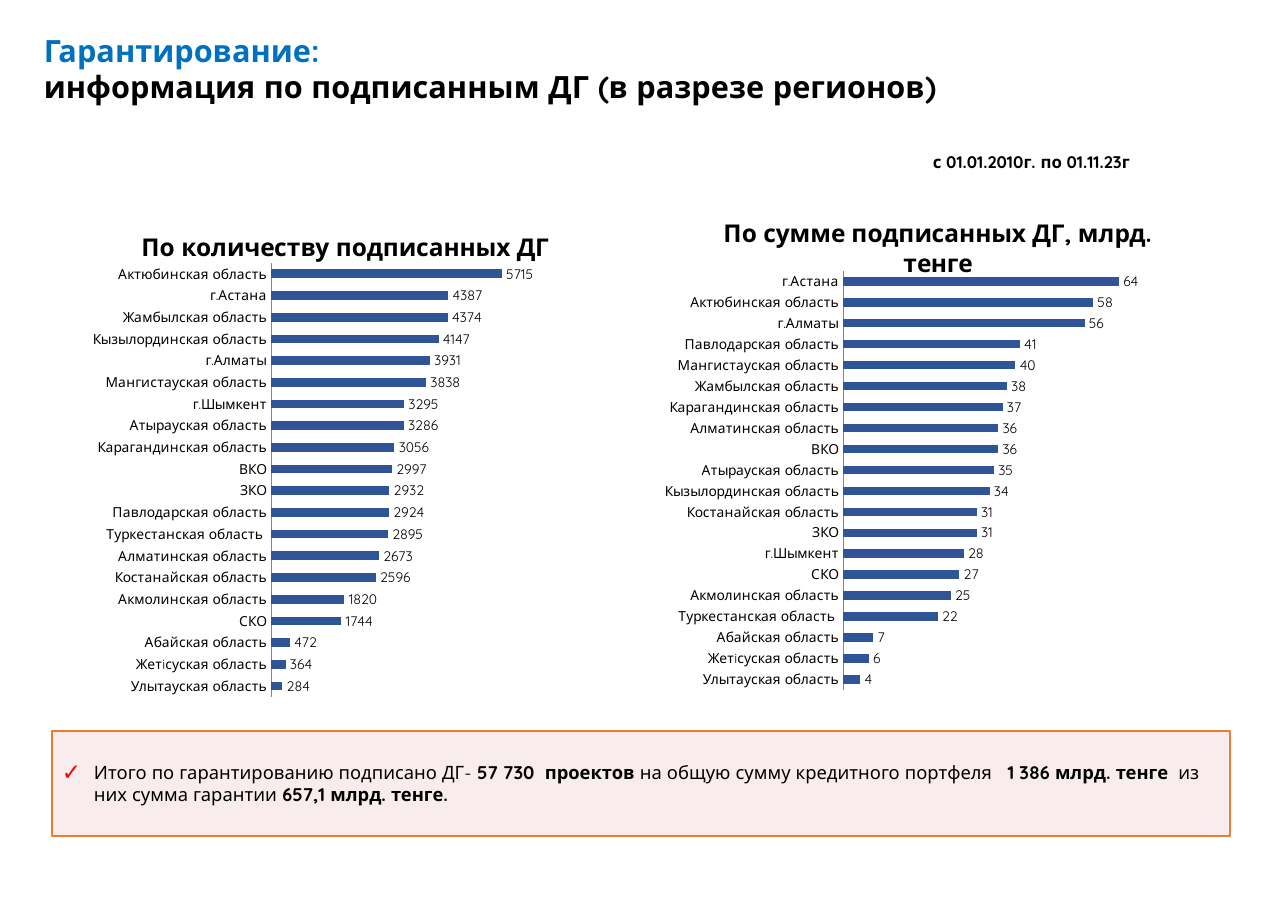
from dataclasses import dataclass

from pptx import Presentation
from pptx.chart.data import CategoryChartData
from pptx.dml.color import RGBColor
from pptx.enum.chart import XL_CHART_TYPE as ChartType
from pptx.enum.chart import XL_LABEL_POSITION as LabelPosition
from pptx.enum.chart import XL_TICK_LABEL_POSITION as TickLabels
from pptx.enum.chart import XL_TICK_MARK as TickMark
from pptx.enum.shapes import MSO_SHAPE as Preset
from pptx.enum.text import MSO_ANCHOR as Anchor
from pptx.enum.text import MSO_AUTO_SIZE as AutoSize
from pptx.enum.text import PP_ALIGN as Align
from pptx.oxml import parse_xml
from pptx.oxml.ns import nsdecls, qn
from pptx.util import Pt

PX = 914400 / 110.2


@dataclass(frozen=True)
class Theme:
    font: str = "Quicksand"
    black: str = "000000"
    blue: str = "0070C0"
    bar: str = "2F5597"
    axis: str = "868686"
    panel: str = "F2DCDB"
    border: str = "ED7D31"
    check: str = "FF0000"
    heading: int = 20
    chart_title: int = 16
    summary: int = 12
    period: int = 11
    label: int = 9


def px(*lengths):
    return [round(length * PX) for length in lengths]


def apply(target, **values):
    for name, value in values.items():
        setattr(target, name, value)


def set_layout(parent, index, box, place):
    """Place a chart part, given in px from the chart's corner."""
    for old in parent.findall(qn("c:layout")):
        parent.remove(old)
    modes = "".join(f'<c:{axis}Mode val="edge"/>' for axis in "xy")
    target = '<c:layoutTarget val="inner"/>' if len(place) == 4 else ""
    width, height = box[2:]
    sizes = "".join(f'<c:{name} val="{length / whole}"/>' for name, length, whole
                    in zip("xywh", place, (width, height, width, height)))
    parent.insert(index, parse_xml(
        f'<c:layout {nsdecls("c")}><c:manualLayout>{target}{modes}{sizes}'
        "</c:manualLayout></c:layout>"))


class SlideBuilder:
    def __init__(self, slide, theme):
        self.slide, self.theme = slide, theme

    def style(self, font, size, color=None, bold=False):
        apply(font, name=self.theme.font, size=Pt(size), bold=bold)
        font.color.rgb = RGBColor.from_string(color or self.theme.black)

    def runs(self, paragraph, size, parts):
        for text, color, bold in parts:
            if text == "\n":
                paragraph.add_line_break()
                continue
            run = paragraph.add_run()
            run.text = text
            self.style(run.font, size, color, bold)

    def text(self, box, size, parts, wrap=True):
        frame = self.slide.shapes.add_textbox(*px(*box)).text_frame
        apply(frame, word_wrap=wrap, auto_size=AutoSize.SHAPE_TO_FIT_TEXT)
        self.runs(frame.paragraphs[0], size, parts)

    def summary(self, box, parts):
        theme = self.theme
        shape = self.slide.shapes.add_shape(Preset.RECTANGLE, *px(*box))
        shape.shadow.inherit = False
        shape.fill.solid()
        shape.fill.fore_color.rgb = RGBColor.from_string(theme.panel)
        color = shape.fill._xPr.find(qn("a:solidFill"))[0]
        color.append(parse_xml(f'<a:alpha {nsdecls("a")} val="50000"/>'))
        shape.line.color.rgb = RGBColor.from_string(theme.border)
        shape.line.width = Pt(1)

        side, edge = px(9, 4)
        apply(shape.text_frame, word_wrap=True, vertical_anchor=Anchor.MIDDLE,
              margin_left=side, margin_right=side, margin_top=edge, margin_bottom=edge)
        paragraph = shape.text_frame.paragraphs[0]
        apply(paragraph, alignment=Align.LEFT, space_after=Pt(6))
        properties = paragraph._p.get_or_add_pPr()
        indent, hanging = px(33, -32)
        properties.set("marL", str(indent))
        properties.set("indent", str(hanging))
        for bullet in (f'<a:buClr {{}}><a:srgbClr val="{theme.check}"/></a:buClr>',
                       '<a:buSzPct {} val="125000"/>',
                       f'<a:buFont {{}} typeface="{theme.font}"/>',
                       '<a:buChar {} char="✓"/>'):
            properties.append(parse_xml(bullet.format(nsdecls("a"))))
        self.runs(paragraph, theme.summary, parts)

    def bar_chart(self, box, title, title_at, plot, maximum, number_format, regions):
        """Draw regions, listed from the top bar down, as horizontal bars."""
        theme = self.theme
        data = CategoryChartData()
        names, values = zip(*reversed(regions))
        data.categories = names
        data.add_series("Series 1", values)
        chart = self.slide.shapes.add_chart(
            ChartType.BAR_CLUSTERED, *px(*box), data).chart
        self.style(chart.font, theme.label)
        apply(chart, has_legend=False, has_title=True)
        self.runs(chart.chart_title.text_frame.paragraphs[0], theme.chart_title,
                  [(title, theme.black, True)])
        set_layout(chart.chart_title._element, 1, box, title_at)
        set_layout(chart._chartSpace.chart.plotArea, 0, box, plot)

        axis = chart.category_axis
        apply(axis, major_tick_mark=TickMark.NONE, minor_tick_mark=TickMark.NONE,
              tick_label_position=TickLabels.NEXT_TO_AXIS, has_major_gridlines=False)
        self.style(axis.tick_labels.font, theme.label)
        axis.format.line.color.rgb = RGBColor.from_string(theme.axis)
        axis.format.line.width = Pt(0.5)
        apply(chart.value_axis, visible=False, has_major_gridlines=False,
              minimum_scale=0, maximum_scale=maximum)

        bars = chart.plots[0]
        apply(bars, gap_width=150, vary_by_categories=False, has_data_labels=True)
        fill = bars.series[0].format.fill
        fill.solid()
        fill.fore_color.rgb = RGBColor.from_string(theme.bar)
        apply(bars.data_labels, show_value=True, position=LabelPosition.OUTSIDE_END,
              number_format=number_format, number_format_is_linked=False)
        self.style(bars.data_labels.font, theme.label)


COUNTS = [
    ("Актюбинская область", 5715), ("г.Астана", 4387), ("Жамбылская область", 4374),
    ("Кызылординская область", 4147), ("г.Алматы", 3931), ("Мангистауская область", 3838),
    ("г.Шымкент", 3295), ("Атырауская область", 3286), ("Карагандинская область", 3056),
    ("ВКО", 2997), ("ЗКО", 2932), ("Павлодарская область", 2924),
    ("Туркестанская область ", 2895), ("Алматинская область", 2673),
    ("Костанайская область", 2596), ("Акмолинская область", 1820), ("СКО", 1744),
    ("Абайская область", 472), ("Жетiсуская область", 364), ("Улытауская область", 284),
]
SUMS = [
    ("г.Астана", 64), ("Актюбинская область", 58), ("г.Алматы", 56),
    ("Павлодарская область", 41), ("Мангистауская область", 40), ("Жамбылская область", 38),
    ("Карагандинская область", 37), ("Алматинская область", 36), ("ВКО", 36),
    ("Атырауская область", 35), ("Кызылординская область", 34),
    ("Костанайская область", 31), ("ЗКО", 31), ("г.Шымкент", 28), ("СКО", 27),
    ("Акмолинская область", 25), ("Туркестанская область ", 22),
    ("Абайская область", 7), ("Жетiсуская область", 6), ("Улытауская область", 4),
]


def main():
    presentation = Presentation()
    width, height = px(1288, 911)
    apply(presentation, slide_width=width, slide_height=height)
    theme = Theme()
    slide = presentation.slides.add_slide(presentation.slide_layouts[6])
    builder = SlideBuilder(slide, theme)
    black = theme.black

    builder.text((33, 26, 925, 85), theme.heading, [
        ("Гарантирование: ", theme.blue, True), ("\n", None, False),
        ("информация по подписанным ДГ (в разрезе регионов)", black, True)])
    builder.text((922, 146, 239, 32), theme.period,
                 [("с 01.01.2010г. по 01.11.23г", black, True)], wrap=False)
    builder.summary((52, 731, 1178, 105), [
        ("Итого по гарантированию подписано ДГ- ", black, False),
        ("57 730  проектов ", black, True),
        ("на общую сумму кредитного портфеля  ", black, False),
        (" 1 386 млрд. тенге  ", black, True),
        ("из них сумма гарантии", black, False),
        (" 657,1 млрд. тенге.", black, True)])
    builder.bar_chart((50, 208, 592, 518), "По количеству подписанных ДГ",
                      (87, 17), (221, 55, 283, 434), 7000, "General", COUNTS)
    builder.bar_chart((608, 210, 611, 503), "По сумме подписанных ДГ, млрд. тенге",
                      (111, 1), (235, 61, 302, 419), 70, "#,##0", SUMS)
    presentation.save("out.pptx")


if __name__ == "__main__":
    main()
